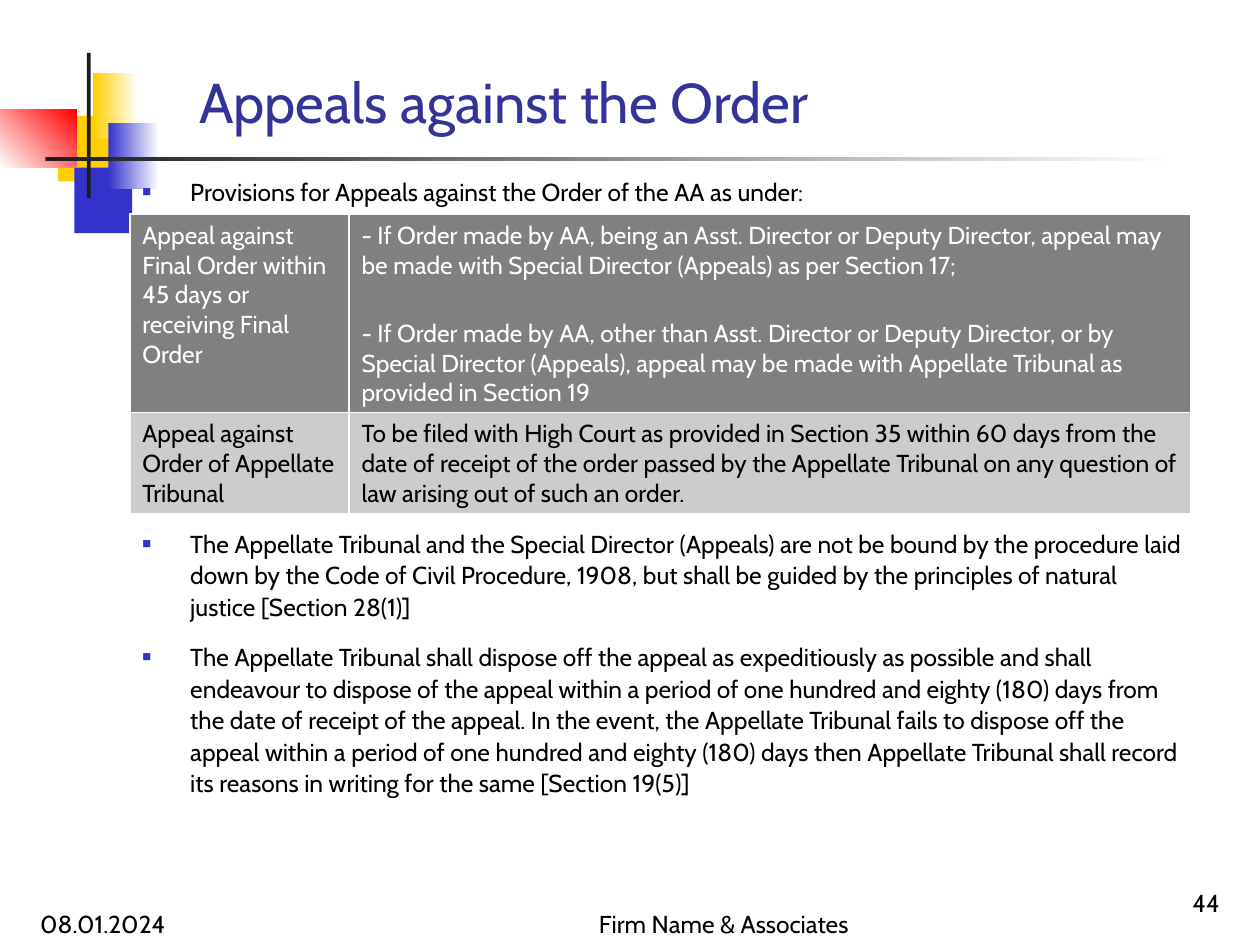
from lxml import etree
from pptx import Presentation
from pptx.dml.color import RGBColor
from pptx.enum.shapes import MSO_SHAPE
from pptx.enum.text import MSO_ANCHOR, MSO_AUTO_SIZE, PP_ALIGN
from pptx.oxml.ns import qn
from pptx.util import Inches, Pt

RECTANGLE = MSO_SHAPE.RECTANGLE
BOTTOM, TOP = MSO_ANCHOR.BOTTOM, MSO_ANCHOR.TOP
LEFT, CENTER, RIGHT = PP_ALIGN.LEFT, PP_ALIGN.CENTER, PP_ALIGN.RIGHT
NO_AUTOFIT = MSO_AUTO_SIZE.NONE

FONT = "Cabin"
COLORS = {
    "yellow": "FFCF01", "blue": "3333CC", "red": "FF0000", "dark": "1C1C1C",
    "white": "FFFFFF", "black": "000000", "title": "333399",
    "header": "808080", "row": "CCCCCC",
}

# Content
TITLE = "Appeals against the Order"
# Text and space before it in points; the second bullet starts below the table
BULLETS = [
    ("Provisions for Appeals against the Order of the AA as under:", 2.8),
    ("The Appellate Tribunal and the Special Director (Appeals) are not be bound by the "
     "procedure laid down by the Code of Civil Procedure, 1908, but shall be guided by the "
     "principles of natural justice [Section 28(1)]", 175),
    ("The Appellate Tribunal shall dispose off the appeal as expeditiously as possible and "
     "shall endeavour to dispose of the appeal within a period of one hundred and eighty "
     "(180) days from the date of receipt of the appeal. In the event, the Appellate Tribunal "
     "fails to dispose off the appeal within a period of one hundred and eighty (180) days "
     "then Appellate Tribunal shall record its reasons in writing for the same "
     "[Section 19(5)]", 2.8),
]
APPEALS = [
    ("Appeal against Final Order within 45 days or receiving Final Order",
     "- If Order made by AA, being an Asst. Director or Deputy Director, appeal may be made "
     "with Special Director (Appeals) as per Section 17;\n"
     "- If Order made by AA, other than Asst. Director or Deputy Director, or by Special "
     "Director (Appeals), appeal may be made with Appellate Tribunal as provided in "
     "Section 19"),
    ("Appeal against Order of Appellate Tribunal",
     "To be filed with High Court as provided in Section 35 within 60 days from the date of "
     "receipt of the order passed by the Appellate Tribunal on any question of law arising "
     "out of such an order."),
]
COLUMN_WIDTHS = [1.74, 6.68]
ROW_HEIGHTS = [1.57, 0.8]
ROW_STYLES = [("header", "white"), ("row", "black")]
# Text, box, alignment
FOOTERS = [
    ("08.01.2024", (0.22, 7, 2.08, 0.5), LEFT),
    ("44", (7.7, 6.83, 2.08, 0.5), RIGHT),
    ("Firm Name & Associates", (4.16, 7, 3.17, 0.5), CENTER),
]
# Box, colours from start to end, counter-clockwise gradient angle
DECORATIONS = [
    ((0.46, 0.92, 0.48, 0.52), ["yellow"], 0),
    ((0.59, 1.33, 0.46, 0.52), ["blue"], 0),
    ((0.74, 0.58, 0.36, 0.52), ["yellow", "white"], 0),
    ((0.86, 0.98, 0.4, 0.52), ["blue", "white"], 0),
    ((0, 0.87, 0.61, 0.46), ["white", "red"], 45),
    ((0.69, 0.42, 0.03, 1.15), ["dark"], 0),
    ((0.36, 1.25, 9, 0.03), ["dark", "white"], 0),
]


def color(name):
    return RGBColor.from_string(COLORS[name])


def inches(box):
    return [Inches(value) for value in box]


def place(shape, box):
    shape.left, shape.top, shape.width, shape.height = inches(box)


def format_text(text_frame, color_name="black", size=14, alignment=LEFT):
    for paragraph in text_frame.paragraphs:
        paragraph.alignment = alignment
        for run in paragraph.runs:
            run.font.name, run.font.size, run.font.bold = FONT, Pt(size), False
            run.font.color.rgb = color(color_name)


def add_bullet(paragraph):
    properties = paragraph._p.get_or_add_pPr()
    properties.set("marL", str(Inches(0.38)))
    properties.set("indent", str(Inches(-0.38)))
    bullet_color = etree.SubElement(properties, qn("a:buClr"))
    etree.SubElement(bullet_color, qn("a:srgbClr"), val=COLORS["blue"])
    etree.SubElement(properties, qn("a:buSzPct"), val="60000")
    etree.SubElement(properties, qn("a:buChar"), char="■")


presentation = Presentation()
presentation.slide_width, presentation.slide_height = Inches(10), Inches(7.5)
slide = presentation.slides.add_slide(presentation.slide_layouts[1])

# Decorative blocks and rules, behind the placeholders
for index, (box, color_names, angle) in enumerate(DECORATIONS):
    shape = slide.shapes.add_shape(RECTANGLE, *inches(box))
    shape.shadow.inherit = False
    shape.line.fill.background()
    if len(color_names) == 1:
        shape.fill.solid()
        shape.fill.fore_color.rgb = color(color_names[0])
    else:
        shape.fill.gradient()
        shape.fill.gradient_angle = angle
        for stop, name in zip(shape.fill.gradient_stops, color_names):
            stop.color.rgb = color(name)
    slide.shapes.element.insert(2 + index, shape.element)

# Title
title = slide.shapes.title
place(title, (1.48, 0.5, 8.52, 0.62))
title.text_frame.text = TITLE
title.text_frame.auto_size = NO_AUTOFIT
title.text_frame.vertical_anchor = BOTTOM
format_text(title.text_frame, "title", 32)

# Bullets
body = slide.placeholders[1]
place(body, (1.03, 1.34, 8.5, 5.69))
body.text_frame.text = "\n".join(text for text, _ in BULLETS)
body.text_frame.auto_size = NO_AUTOFIT
body.text_frame.vertical_anchor = TOP
format_text(body.text_frame)
for paragraph, (_, space_before) in zip(body.text_frame.paragraphs, BULLETS):
    paragraph.line_spacing = 1.07
    paragraph.space_before, paragraph.space_after = Pt(space_before), Pt(8)
    add_bullet(paragraph)

# Date, page number and footer
for text, box, alignment in FOOTERS:
    text_frame = slide.shapes.add_textbox(*inches(box)).text_frame
    text_frame.word_wrap = True
    text_frame.vertical_anchor = BOTTOM
    text_frame.text = text
    format_text(text_frame, alignment=alignment)

# Appeals table
table_box = (1.03, 1.7, sum(COLUMN_WIDTHS), sum(ROW_HEIGHTS))
table = slide.shapes.add_table(len(APPEALS), len(COLUMN_WIDTHS), *inches(table_box)).table
for column, width in zip(table.columns, COLUMN_WIDTHS):
    column.width = Inches(width)
for row, height, texts, (fill, text_color) in zip(table.rows, ROW_HEIGHTS, APPEALS, ROW_STYLES):
    row.height = Inches(height)
    for cell, text in zip(row.cells, texts):
        cell.fill.solid()
        cell.fill.fore_color.rgb = color(fill)
        cell.text_frame.text = text
        format_text(cell.text_frame, text_color)
        for paragraph in cell.text_frame.paragraphs[1:]:
            paragraph.space_before = Pt(22)

presentation.save("out.pptx")
